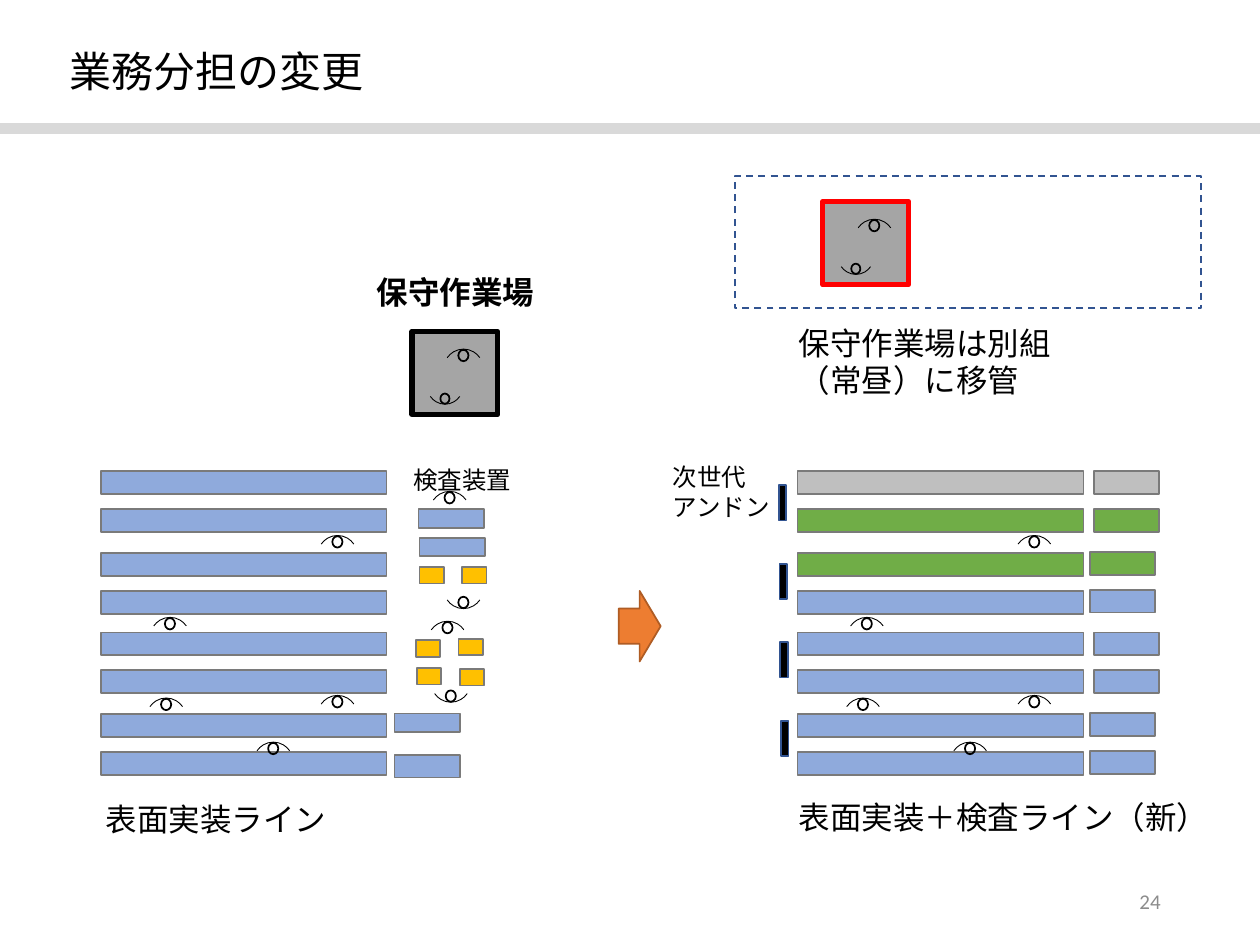
import pptx
import pptx.dml.color
import pptx.enum.dml
import pptx.enum.shapes
import pptx.enum.text
import pptx.util
import pptx.oxml.ns
import lxml.etree

Pt = pptx.util.Pt
SHAPE = pptx.enum.shapes.MSO_SHAPE
ALIGN = pptx.enum.text.PP_ALIGN
ANCHOR = pptx.enum.text.MSO_ANCHOR
BLUE, GREEN, SILVER, YELLOW = "8FAADC", "70AD47", "BFBFBF", "FFC000"
GRAY, EDGE, NAVY, BLACK = "A5A5A5", "7A7A7A", "325491", "000000"


def rgb(value):
    return pptx.dml.color.RGBColor.from_string(value)


def write(tf, text, size=18, color=BLACK, bold=False, align=ALIGN.LEFT, anchor=ANCHOR.TOP):
    """Fill a text frame, one paragraph a line."""
    tf.word_wrap = True
    tf.vertical_anchor = anchor
    for i, line in enumerate(text.split("\n")):
        p = tf.paragraphs[0] if i == 0 else tf.add_paragraph()
        p.alignment = align
        r = p.add_run()
        r.text = line
        r.font.name = "Calibri"
        r.font.size = Pt(size)
        r.font.bold = bold
        r.font.color.rgb = rgb(color)


class Board:
    """Current slide and its drawing style."""

    def __init__(self, slide):
        self.s = slide

    def title(self, text, x, y, w, h):
        sp = self.s.shapes.title
        sp.left, sp.top, sp.width, sp.height = Pt(x), Pt(y), Pt(w), Pt(h)
        write(sp.text_frame, text, size=24)

    def text(self, text, x, y, w, h, **style):
        sp = self.s.shapes.add_textbox(Pt(x), Pt(y), Pt(w), Pt(h))
        write(sp.text_frame, text, **style)

    def shape(self, x, y, w, h, fill=None, line=EDGE, width=1, kind=SHAPE.RECTANGLE, parent=None):
        sp = (parent or self.s).shapes.add_shape(kind, Pt(x), Pt(y), Pt(w), Pt(h))
        sp.shadow.inherit = False
        if fill:
            sp.fill.solid()
            sp.fill.fore_color.rgb = rgb(fill)
        else:
            sp.fill.background()
        sp.line.color.rgb = rgb(line)
        sp.line.width = Pt(width)
        return sp

    def worker(self, x, y, down=False, k=1):
        """A worker: a shoulder arc and a round head, facing up or down."""
        group = self.s.shapes.add_group_shape()
        arc = self.shape(x, y, 23 * k, 23.8 * k, None, BLACK, 0.5, SHAPE.ARC, group)
        arc.adjustments[0], arc.adjustments[1] = (22.12, 85.96) if down else (130.04, 193.88)
        self.shape(x + 8.5 * k, y + (17 if down else 0.4) * k, 5.8 * k, 6.5 * k,
                   None, BLACK, 1, SHAPE.OVAL, group)

    def room(self, x, y, line):
        """The maintenance workshop with its two workers."""
        self.shape(x, y, 49, 47.5, GRAY, line, 3)
        self.worker(x + 8.6, y + 20.2, down=True, k=0.9)
        self.worker(x + 18, y + 10.1)

    def mounting_line(self, x, colors):
        """Eight machine rows in pairs and the workers between them."""
        for y, color in zip(ROWS, colors):
            self.shape(x, y, 163.4, 13, color)
        for dx, y in [(123.8, 306), (25.9, 398.9), (123.8, 397.4), (28.1, 352.8), (87.1, 424.1)]:
            self.worker(x + dx, y)

    def rule(self, y, color, width):
        c = self.s.shapes.add_connector(pptx.enum.shapes.MSO_CONNECTOR.STRAIGHT,
                                        0, Pt(y), Pt(720), Pt(y))
        c.line.color.rgb = rgb(color)
        c.line.width = Pt(width)
        lxml.etree.SubElement(c._element.spPr, pptx.oxml.ns.qn("a:effectLst"))


ROWS = [y + dy for y in (269.3, 316.1, 361.4, 408.2) for dy in (0, 21.6)]
NEW_COLORS = [SILVER, GREEN, GREEN] + [BLUE] * 5

prs = pptx.Presentation()
prs.slide_width, prs.slide_height = Pt(720), Pt(540)
b = Board(prs.slides.add_slide(prs.slide_layouts[5]))

# Heading and page number
b.title("業務分担の変更", 32.4, 22.3, 386, 36)
b.rule(73.5, "D9D9D9", 6)
b.text("24", 508.3, 500.4, 162, 28.8, size=12, color="8C8C8C",
       align=ALIGN.RIGHT, anchor=ANCHOR.MIDDLE)

# Present layout: workshop and mounting line
b.text("保守作業場", 208.1, 152.6, 136, 29, bold=True)
b.room(235.4, 189.4, BLACK)
b.mounting_line(57.6, [BLUE] * 8)
b.text("表面実装ライン", 53.3, 453.6, 204.5, 29)

# Present layout: inspection machines
for x, y, h in [(239.7, 307.4, 10.4), (239.2, 291, 10.6), (225.4, 431.3, 13), (225.4, 407.8, 10.5)]:
    b.shape(x, y, 37.4, h, BLUE)
for x, y in [(239.8, 324), (264.2, 324), (238.3, 381.6), (237.6, 365.8), (262.8, 382.3), (262.1, 365)]:
    b.shape(x, y, 13.9, 9.5, YELLOW)
for x, y, down in [(245.5, 280.8, False), (253.4, 324, True), (244.3, 355, False), (246.2, 377.5, True)]:
    b.worker(x, y, down)
b.text("検査装置", 229, 262.1, 89.3, 24.5, size=14)

# Change arrow
b.shape(353.5, 337.7, 24, 40.3, "ED7D31", "AF5C24", kind=SHAPE.RIGHT_ARROW)

# New layout: workshop moved to another team
b.room(470.2, 115.2, "FF0000")
frame = b.shape(419.8, 100.8, 266.6, 75.4, line=NAVY)
frame.line.dash_style = pptx.enum.dml.MSO_LINE.DASH
b.text("保守作業場は別組\n（常昼）に移管", 449.3, 181.4, 247, 51)

# New layout: mounting and inspection line with status displays
b.mounting_line(455.8, NEW_COLORS)
for i, (y, color) in enumerate(zip(ROWS, NEW_COLORS)):
    shift = i // 2 % 2 or i > 5
    b.shape(622.8 if shift else 625, y - 0.7 if shift else y, 37.4, 13, color)
for i in range(4):
    b.shape(445 + 0.45 * i, 277.2 + 44.9 * i, 4.3, 20.2, BLACK, NAVY)
b.text("次世代\nアンドン", 377.3, 260.6, 83.5, 41, size=14)
b.text("表面実装＋検査ライン（新）", 449.3, 452.5, 270.7, 29)

prs.save("out.pptx")
